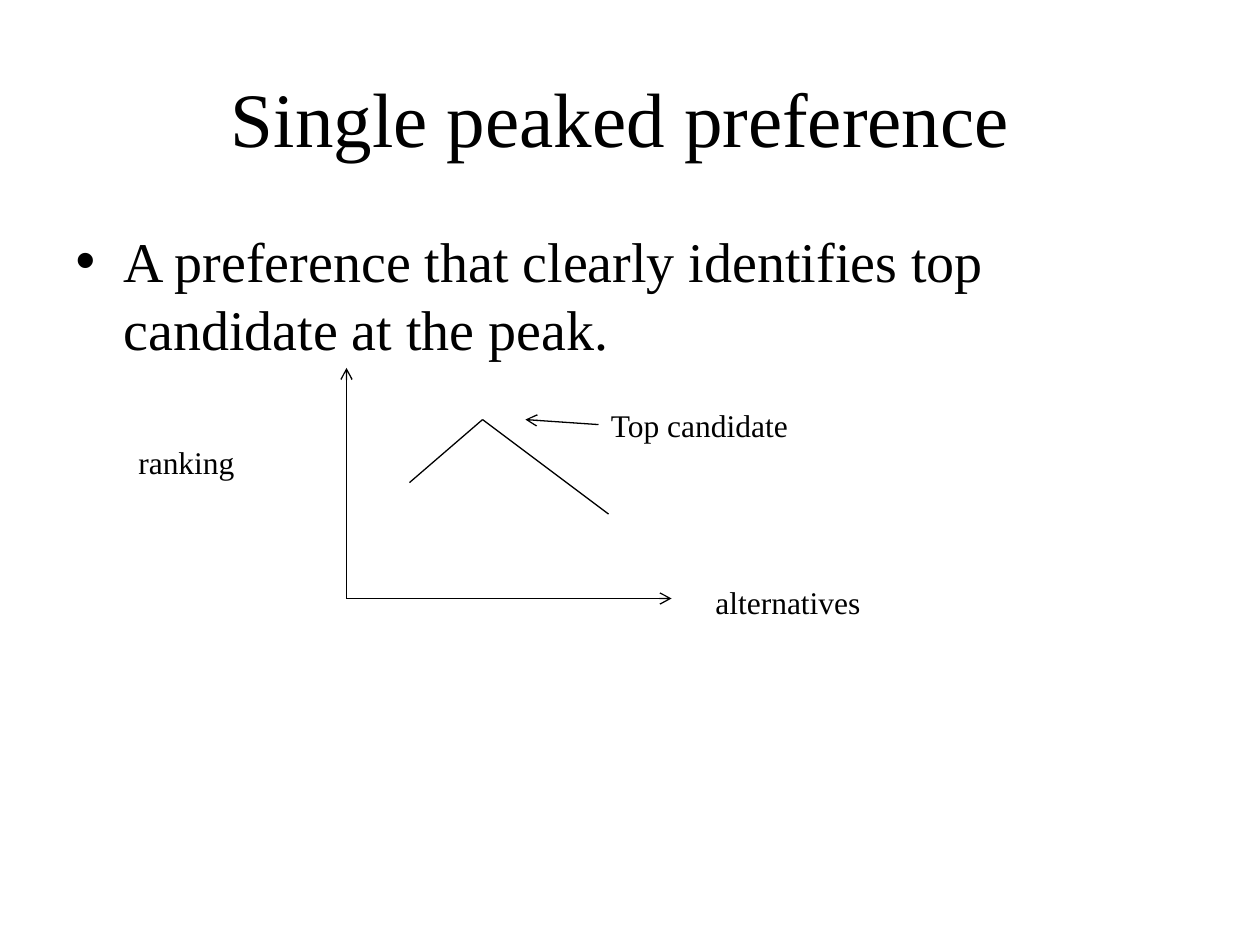
from lxml.etree import SubElement
from pptx import Presentation
from pptx.dml.color import RGBColor
from pptx.enum.shapes import MSO_CONNECTOR
from pptx.enum.text import MSO_ANCHOR, PP_ALIGN
from pptx.oxml.ns import qn
from pptx.util import Inches, Pt

FONT = "Times New Roman"
BLACK = "000000"


def add_run(p, text, size, color=BLACK):
    r = p.add_run()
    r.text = text
    r.font.name = FONT
    r.font.size = Pt(size)
    r.font.color.rgb = RGBColor.from_string(color)


prs = Presentation()
prs.slide_width, prs.slide_height = Inches(10), Inches(7.5)
s = prs.slides.add_slide(prs.slide_layouts[1])

# Title and definition
title, body = s.placeholders
for sp, top, height, anchor in [
    (title, 0.3, 1.25, MSO_ANCHOR.MIDDLE),
    (body, 1.75, 4.95, MSO_ANCHOR.TOP),
]:
    sp.left, sp.top = Inches(0.5), Inches(top)
    sp.width, sp.height = Inches(9), Inches(height)
    sp.text_frame.vertical_anchor = anchor

p = title.text_frame.paragraphs[0]
p.alignment = PP_ALIGN.CENTER
add_run(p, "Single peaked preference ", 44)

p = body.text_frame.paragraphs[0]
add_run(p, "A preference that clearly identifies top candidate at the peak.", 32)
pPr = p._p.get_or_add_pPr()
pPr.set("marL", str(Inches(0.38)))
pPr.set("indent", str(-Inches(0.38)))
SubElement(pPr, qn("a:buChar"), char="•")

# Axes, preference curve and pointer to the peak
origin, peak = (2.75, 4.75), (3.83, 3.33)
for start, end, has_arrow in [
    (origin, (2.75, 2.92), True),
    (origin, (5.33, 4.75), True),
    ((3.25, 3.83), peak, False),
    (peak, (4.83, 4.08), False),
    ((4.75, 3.37), (4.17, 3.33), True),
]:
    line = s.shapes.add_connector(
        MSO_CONNECTOR.STRAIGHT, *(Inches(v) for v in start + end)
    )
    line.line.color.rgb = RGBColor.from_string(BLACK)
    line.line.width = Pt(0.75)
    if has_arrow:
        SubElement(line.line._get_or_add_ln(), qn("a:tailEnd"), type="arrow")
    SubElement(line._element.spPr, qn("a:effectLst"))

# Labels
for text, left, top in [
    ("Top candidate", 4.75, 3.17),
    ("ranking", 1, 3.47),
    ("alternatives", 5.58, 4.58),
]:
    box = s.shapes.add_textbox(Inches(left), Inches(top), Inches(1.67), Inches(0.4))
    tf = box.text_frame
    tf.word_wrap = True
    add_run(tf.paragraphs[0], text, 18)

prs.save("out.pptx")
